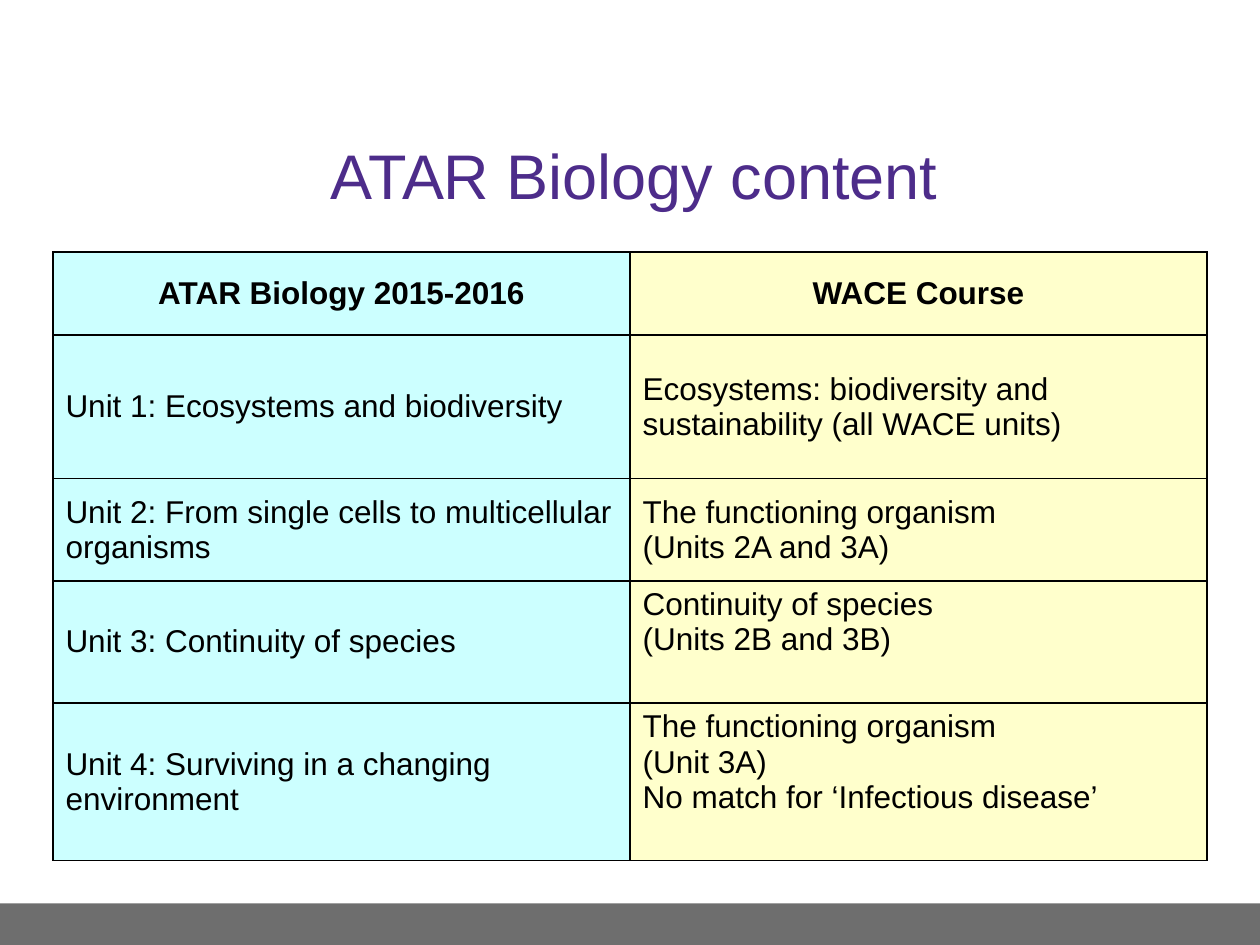
"""Build a slide comparing ATAR Biology units with the WACE course."""
from lxml import etree
from pptx import Presentation
from pptx.dml.color import RGBColor
from pptx.enum.shapes import MSO_SHAPE
from pptx.enum.text import MSO_ANCHOR, PP_ALIGN
from pptx.oxml.ns import qn
from pptx.util import Inches, Pt

RECTANGLE = MSO_SHAPE.RECTANGLE
TOP, MIDDLE = MSO_ANCHOR.TOP, MSO_ANCHOR.MIDDLE
LEFT, CENTER = PP_ALIGN.LEFT, PP_ALIGN.CENTER

THEME = {
    "font": "Arial",
    "title_size": Pt(36),
    "table_size": Pt(18),
    "border_width": Pt(1),
    "title": RGBColor.from_string("4D2C8A"),
    "text": RGBColor.from_string("000000"),
    "bar": RGBColor.from_string("6E6E6E"),
    "columns": [RGBColor.from_string("CCFFFF"), RGBColor.from_string("FFFFCC")],
}

ROWS = [
    (0.66, MIDDLE, "ATAR Biology 2015-2016", "WACE Course"),
    (1.14, MIDDLE, "Unit 1: Ecosystems and biodiversity",
     "Ecosystems: biodiversity and sustainability (all WACE units)"),
    (0.81, MIDDLE, "Unit 2: From single cells to multicellular organisms",
     "The functioning organism\n(Units 2A and 3A)"),
    (0.97, TOP, "Unit 3: Continuity of species",
     "Continuity of species\n(Units 2B and 3B)"),
    (1.25, TOP, "Unit 4: Surviving in a changing environment",
     "The functioning organism\n(Unit 3A)\nNo match for ‘Infectious disease’"),
]


def format_text(frame, alignment, size, color, bold=False):
    font_values = {"name": THEME["font"], "size": size, "bold": bold}
    for paragraph in frame.paragraphs:
        paragraph.alignment = alignment
        for run in paragraph.runs:
            for name, value in font_values.items():
                setattr(run.font, name, value)
            run.font.color.rgb = color


def add_borders(cell):
    properties = cell._tc.get_or_add_tcPr()
    for side in ("lnL", "lnR", "lnT", "lnB"):
        line = etree.SubElement(properties, qn(f"a:{side}"), w=str(THEME["border_width"]))
        fill = etree.SubElement(line, qn("a:solidFill"))
        etree.SubElement(fill, qn("a:srgbClr"), val=str(THEME["text"]))


presentation = Presentation()
presentation.slide_width, presentation.slide_height = Inches(10), Inches(7.5)
slide = presentation.slides.add_slide(presentation.slide_layouts.get_by_name("Title Only"))

bar_height = Inches(0.33)
bar = slide.shapes.add_shape(
    RECTANGLE, 0, presentation.slide_height - bar_height, presentation.slide_width, bar_height)
bar.shadow.inherit = False
bar.fill.solid()
bar.fill.fore_color.rgb = THEME["bar"]
bar.line.fill.background()

title = slide.shapes.title
title_box = {"left": 0.36, "top": 0.92, "width": 9.35, "height": 0.92}
for name, value in title_box.items():
    setattr(title, name, Inches(value))
title.text_frame.text = "ATAR Biology content"
title.text_frame.vertical_anchor = MIDDLE
format_text(title.text_frame, CENTER, THEME["title_size"], THEME["title"])

table_left = Inches(0.42)
table_width = presentation.slide_width - 2 * table_left
table_height = Inches(sum(row[0] for row in ROWS))
table = slide.shapes.add_table(
    len(ROWS), 2, table_left, Inches(2), table_width, table_height).table
table.first_row = table.horz_banding = False

for row_index, (height, right_anchor, *texts) in enumerate(ROWS):
    table.rows[row_index].height = Inches(height)
    is_header = row_index == 0
    for column_index, text in enumerate(texts):
        cell = table.cell(row_index, column_index)
        cell.text = text
        cell.vertical_anchor = right_anchor if column_index else MIDDLE
        add_borders(cell)
        cell.fill.solid()
        cell.fill.fore_color.rgb = THEME["columns"][column_index]
        format_text(cell.text_frame, CENTER if is_header else LEFT,
                    THEME["table_size"], THEME["text"], is_header)

presentation.save("out.pptx")
